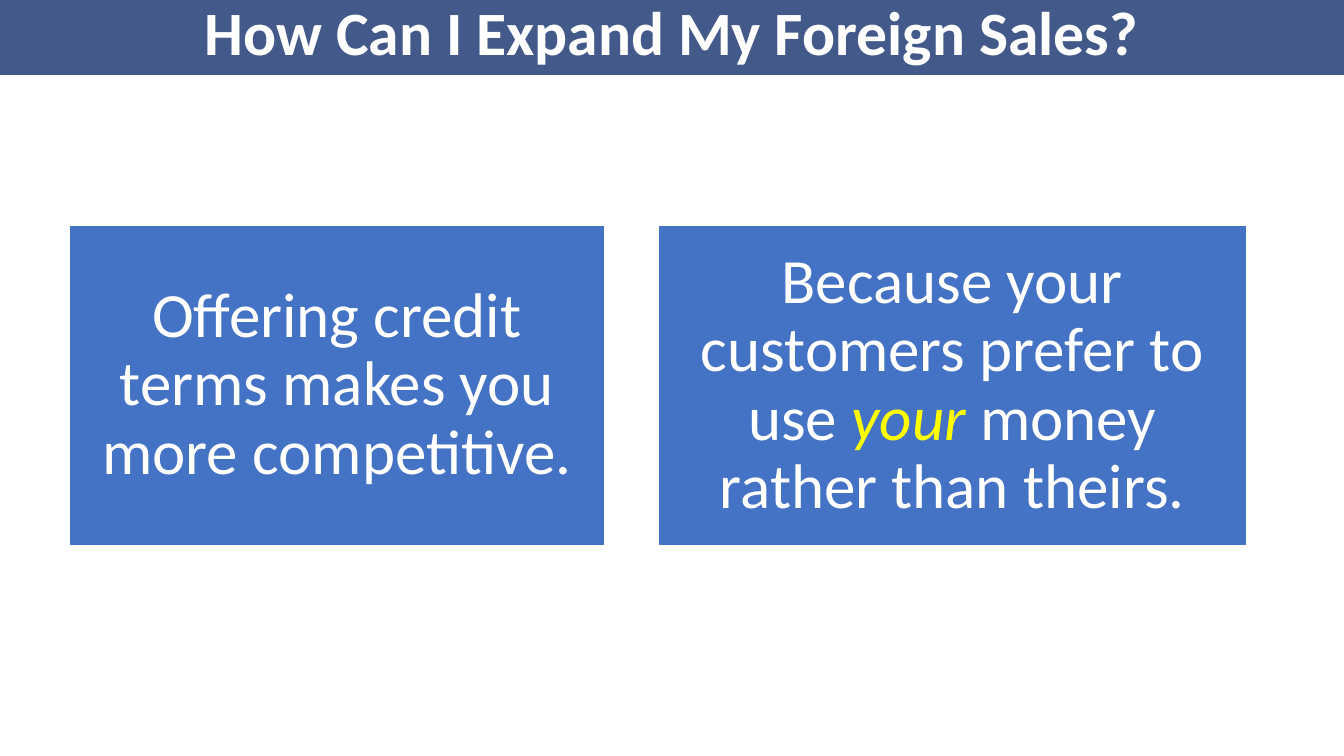
from dataclasses import dataclass

from lxml.etree import SubElement
from pptx import Presentation
from pptx.dml.color import RGBColor as Rgb
from pptx.enum.shapes import MSO_SHAPE as Shape
from pptx.enum.text import MSO_ANCHOR as Anchor, MSO_AUTO_SIZE as Fit, PP_ALIGN as Align
from pptx.oxml.ns import qn
from pptx.slide import Slide
from pptx.text.text import Font, TextFrame
from pptx.util import Pt


@dataclass(frozen=True)
class Theme:
    font: str = "Calibri"
    band: Rgb = Rgb(0x00, 0x20, 0x60)
    alpha: int = 74
    card: Rgb = Rgb(0x44, 0x72, 0xC4)
    white: Rgb = Rgb(0xFF, 0xFF, 0xFF)
    stress: Rgb = Rgb(0xFF, 0xFF, 0x00)
    head: float = 44
    body: float = 45


@dataclass(frozen=True)
class Phrase:
    text: str
    stress: bool = False


@dataclass(frozen=True)
class Card:
    left: float
    width: float
    words: tuple[Phrase, ...]


THEME = Theme()
WIDTH, HEIGHT = 960, 540
TOP, TALL = 160.9, 229
CARDS = (
    Card(49.7, 382, (Phrase("Offering credit terms makes you more competitive."),)),
    Card(470, 420.4, (
        Phrase("Because your customers prefer to use "),
        Phrase("your", stress=True),
        Phrase(" money rather than theirs."),
    )),
)


def style(font: Font, size: float, color: Rgb) -> None:
    font.name = THEME.font
    font.size = Pt(size)
    font.color.rgb = color


def inset(frame: TextFrame, side: float, edge: float) -> None:
    frame.word_wrap = True
    frame.auto_size = Fit.NONE
    frame.margin_left = frame.margin_right = Pt(side)
    frame.margin_top = frame.margin_bottom = Pt(edge)


def add_title(slide: Slide, text: str) -> None:
    title = slide.shapes.title
    title.left, title.top, title.width, title.height = Pt(0), Pt(-8.5), Pt(WIDTH), Pt(62)
    title.fill.solid()
    title.fill.fore_color.rgb = THEME.band
    tint = title.element.spPr.find(".//" + qn("a:srgbClr"))
    SubElement(tint, qn("a:alpha")).set("val", str(THEME.alpha * 1000))
    frame = title.text_frame
    frame.text = text
    inset(frame, 8.5, 4.25)
    frame.vertical_anchor = Anchor.TOP
    para = frame.paragraphs[0]
    para.alignment = Align.CENTER
    font = para.runs[0].font
    style(font, THEME.head, THEME.white)
    font.bold = True


def add_card(slide: Slide, card: Card) -> None:
    box = slide.shapes.add_shape(
        Shape.RECTANGLE, Pt(card.left), Pt(TOP), Pt(card.width), Pt(TALL))
    box.shadow.inherit = False
    box.fill.solid()
    box.fill.fore_color.rgb = THEME.card
    box.line.color.rgb = THEME.white
    box.line.width = Pt(1)
    frame = box.text_frame
    inset(frame, 13.5, 13.5)
    frame.vertical_anchor = Anchor.MIDDLE
    para = frame.paragraphs[0]
    para.alignment = Align.CENTER
    para.line_spacing = 0.9
    for phrase in card.words:
        run = para.add_run()
        run.text = phrase.text
        style(run.font, THEME.body, THEME.stress if phrase.stress else THEME.white)
        run.font.italic = phrase.stress


def main() -> None:
    deck = Presentation()
    deck.slide_width, deck.slide_height = Pt(WIDTH), Pt(HEIGHT)
    slide = deck.slides.add_slide(deck.slide_layouts.get_by_name("Title Only"))
    add_title(slide, "How Can I Expand My Foreign Sales?")
    for card in CARDS:
        add_card(slide, card)
    deck.save("out.pptx")


if __name__ == "__main__":
    main()
